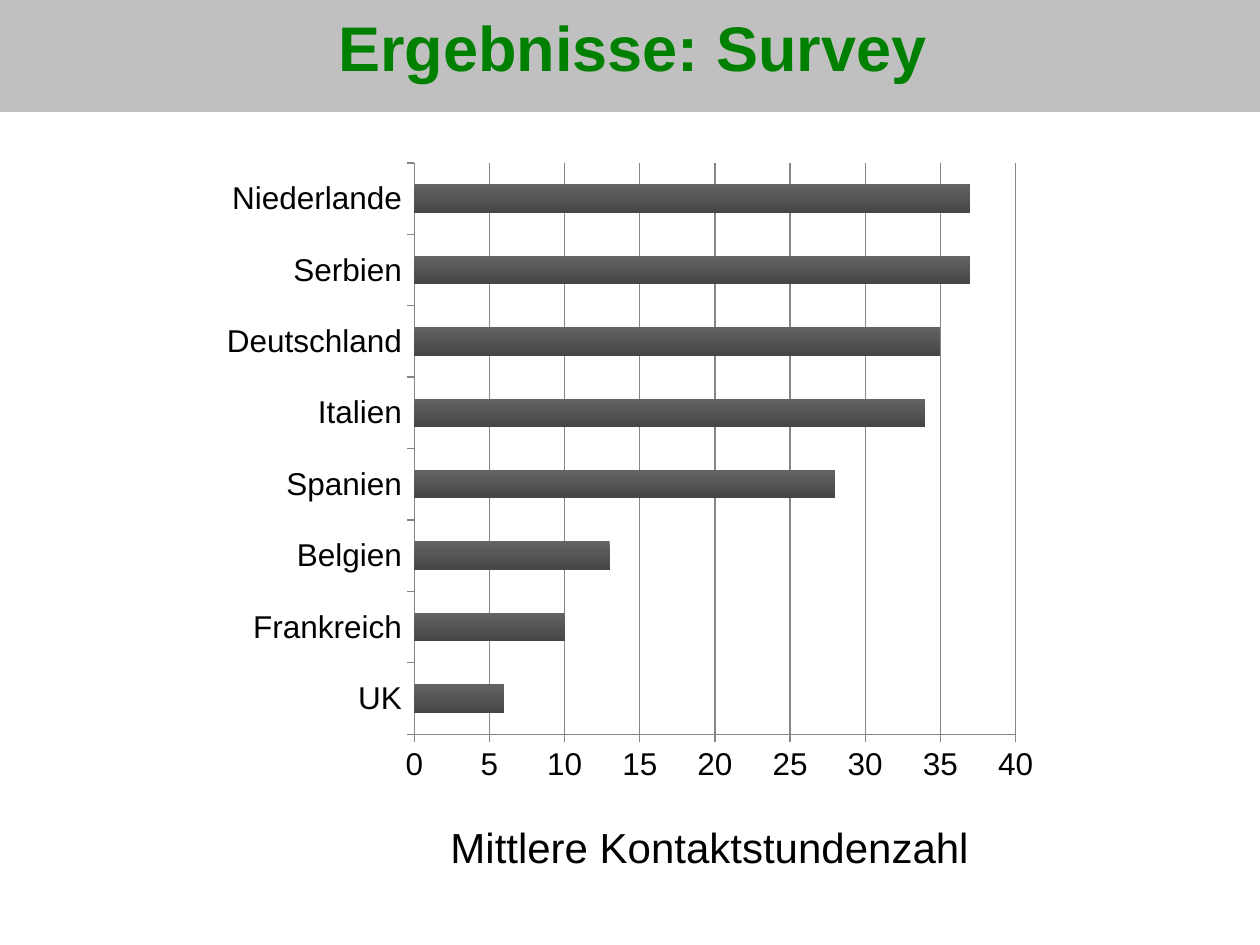
from pptx import Presentation
from pptx.chart.data import CategoryChartData
from pptx.dml.color import RGBColor
from pptx.enum.chart import XL_CHART_TYPE, XL_TICK_MARK
from pptx.enum.shapes import MSO_SHAPE
from pptx.enum.text import MSO_ANCHOR, MSO_AUTO_SIZE, PP_ALIGN
from pptx.util import Pt

PX = 914400 / 126
COLORS = {
    "band": "C0C0C0",
    "title": "008000",
    "text": "000000",
    "axis": "868686",
    "bar_top": "636363",
    "bar_bottom": "464646",
}
HOURS = {
    "UK": 6,
    "Frankreich": 10,
    "Belgien": 13,
    "Spanien": 28,
    "Italien": 34,
    "Deutschland": 35,
    "Serbien": 37,
    "Niederlande": 37,
}


def px(*lengths):
    return [round(length * PX) for length in lengths]


def color(name):
    return RGBColor.from_string(COLORS[name])


deck = Presentation()
deck.slide_width, deck.slide_height = px(1260, 945)
page = deck.slides.add_slide(deck.slide_layouts[6])

band = page.shapes.add_shape(MSO_SHAPE.RECTANGLE, *px(0, 0, 1260, 112))
band.shadow.inherit = False
band.fill.solid()
band.fill.fore_color.rgb = color("band")
band.line.fill.background()

# Chart
data = CategoryChartData()
data.categories = list(HOURS)
data.add_series("Series 1", list(HOURS.values()))
chart = page.shapes.add_chart(
    XL_CHART_TYPE.BAR_CLUSTERED, *px(210, 150, 840, 645), data
).chart
chart.has_legend = False
chart.has_title = False
chart.font.name = "Arial"
chart.font.size = Pt(18)
chart.font.color.rgb = color("text")

plot = chart.plots[0]
plot.gap_width = 150
plot.vary_by_categories = False
bar_fill = plot.series[0].format.fill
bar_fill.gradient()
bar_fill.gradient_angle = 270
for stop, name in zip(bar_fill.gradient_stops, ("bar_top", "bar_bottom")):
    stop.color.rgb = color(name)

hours_axis = chart.value_axis
hours_axis.minimum_scale = 0
hours_axis.maximum_scale = 40
hours_axis.major_unit = 5
hours_axis.has_major_gridlines = True
chart.category_axis.has_major_gridlines = False
for axis in (chart.category_axis, hours_axis):
    axis.major_tick_mark = XL_TICK_MARK.OUTSIDE
    axis.minor_tick_mark = XL_TICK_MARK.NONE
for part in (chart.category_axis, hours_axis, hours_axis.major_gridlines):
    part.format.line.color.rgb = color("axis")
    part.format.line.width = Pt(0.75)

# Title and axis caption
labels = [
    {
        "text": "Ergebnisse: Survey",
        "place": (10, 7, 1245, 79),
        "color": "title",
        "align": PP_ALIGN.CENTER,
        "frame": {"word_wrap": True, "vertical_anchor": MSO_ANCHOR.MIDDLE},
        "font": {"name": "Arial", "size": Pt(36), "bold": True},
    },
    {
        "text": "Mittlere Kontaktstundenzahl",
        "place": (438, 815, 549, 63),
        "color": "text",
        "align": PP_ALIGN.LEFT,
        "frame": {"word_wrap": False, "auto_size": MSO_AUTO_SIZE.SHAPE_TO_FIT_TEXT},
        "font": {"name": "Arial", "size": Pt(24), "bold": False},
    },
]
for label in labels:
    box = page.shapes.add_textbox(*px(*label["place"]))
    for name, value in label["frame"].items():
        setattr(box.text_frame, name, value)
    paragraph = box.text_frame.paragraphs[0]
    paragraph.alignment = label["align"]
    span = paragraph.add_run()
    span.text = label["text"]
    for name, value in label["font"].items():
        setattr(span.font, name, value)
    span.font.color.rgb = color(label["color"])

deck.save("out.pptx")
